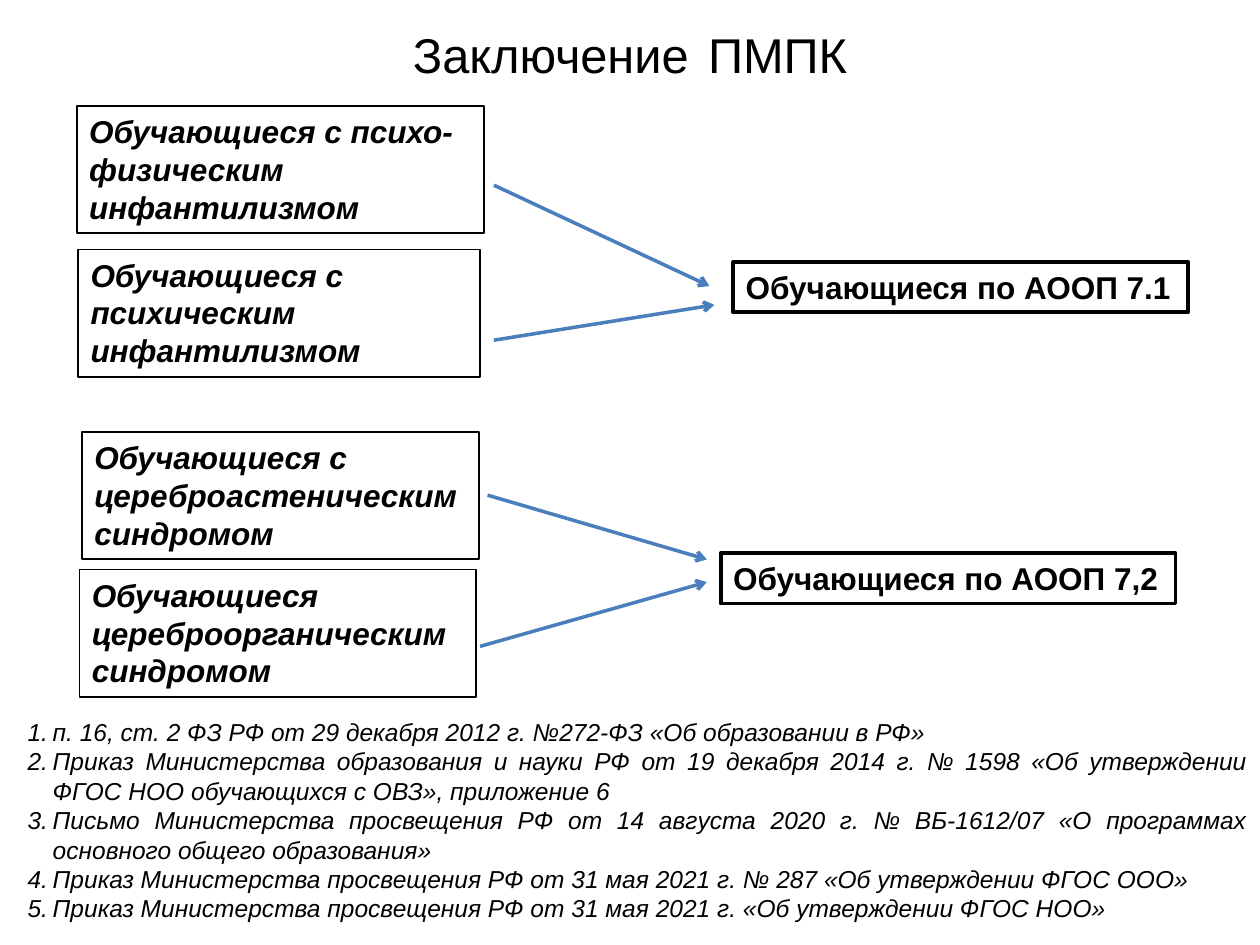
from pptx import Presentation
from pptx.dml.color import RGBColor
from pptx.enum.shapes import MSO_CONNECTOR, MSO_SHAPE
from pptx.enum.text import MSO_ANCHOR, PP_ALIGN
from pptx.oxml.ns import qn
from pptx.util import Inches, Pt
from lxml import etree

RECT = MSO_SHAPE.RECTANGLE
STRAIGHT = MSO_CONNECTOR.STRAIGHT
MIDDLE, TOP = MSO_ANCHOR.MIDDLE, MSO_ANCHOR.TOP
LEFT, CENTER, JUSTIFY = PP_ALIGN.LEFT, PP_ALIGN.CENTER, PP_ALIGN.JUSTIFY

FONT = "Arial"
BLACK, BLUE = "000000", "4B7EBC"

# Each box: left, top, width, height, text
GROUPS = [
    {
        "causes": [
            (0.61, 0.84, 3.23, 1.01, "Обучающиеся с психо-физическим инфантилизмом"),
            (0.62, 1.98, 3.19, 1.01, "Обучающиеся с психическим инфантилизмом"),
        ],
        "program": (5.82, 2.08, 3.61, 0.4, "Обучающиеся по АООП 7.1"),
        "arrows": [(3.92, 1.47, 5.63, 2.27), (3.92, 2.7, 5.67, 2.42)],
    },
    {
        "causes": [
            (0.65, 3.43, 3.15, 1.01, "Обучающиеся с цереброастеническим синдромом"),
            (0.63, 4.52, 3.15, 1.01, "Обучающиеся цереброорганическим синдромом"),
        ],
        "program": (5.72, 4.39, 3.61, 0.4, "Обучающиеся по АООП 7,2"),
        "arrows": [(3.87, 3.93, 5.61, 4.44), (3.81, 5.13, 5.61, 4.62)],
    },
]

SOURCES = [
    "п. 16, ст. 2 ФЗ РФ от 29 декабря 2012 г. №272-ФЗ «Об образовании в РФ»",
    "Приказ Министерства образования и науки РФ от 19 декабря 2014 г. № 1598 "
    "«Об утверждении ФГОС НОО обучающихся с ОВЗ», приложение 6",
    "Письмо Министерства просвещения РФ от 14 августа 2020 г. № ВБ-1612/07 "
    "«О программах основного общего образования»",
    "Приказ Министерства просвещения РФ от 31 мая 2021 г. № 287 «Об утверждении ФГОС ООО»",
    "Приказ Министерства просвещения РФ от 31 мая 2021 г. «Об утверждении ФГОС НОО»",
]


def color(hex_value):
    return RGBColor.from_string(hex_value)


def format_run(r, size, bold=False, italic=False):
    r.font.name = FONT
    r.font.size = Pt(size)
    r.font.bold = bold
    r.font.italic = italic
    r.font.color.rgb = color(BLACK)


def add_title(s, left, top, width, height):
    tb = s.shapes.add_textbox(Inches(left), Inches(top), Inches(width), Inches(height))
    tf = tb.text_frame
    tf.word_wrap = True
    tf.vertical_anchor = MIDDLE
    p = tf.paragraphs[0]
    p.alignment = CENTER
    for text, size in (("Заключение", 27.9), (" ", 39.6), ("ПМПК", 27.9)):
        r = p.add_run()
        r.text = text
        format_run(r, size)


def add_box(s, left, top, width, height, text, line_width, italic):
    sp = s.shapes.add_shape(RECT, Inches(left), Inches(top), Inches(width), Inches(height))
    sp.shadow.inherit = False
    sp.fill.background()
    sp.line.color.rgb = color(BLACK)
    sp.line.width = Pt(line_width)
    tf = sp.text_frame
    tf.word_wrap = True
    tf.vertical_anchor = TOP
    tf.text = text
    p = tf.paragraphs[0]
    p.alignment = LEFT
    format_run(p.runs[0], 18, bold=True, italic=italic)


def add_arrow(s, x1, y1, x2, y2):
    line = s.shapes.add_connector(STRAIGHT, Inches(x1), Inches(y1), Inches(x2), Inches(y2))
    line.line.color.rgb = color(BLUE)
    line.line.width = Pt(2)
    etree.SubElement(line.line._get_or_add_ln(), qn("a:tailEnd"), type="arrow")
    etree.SubElement(line._element.spPr, qn("a:effectLst"))


def add_group(s, causes, program, arrows):
    """Cause boxes with arrows leading to the programme they call for."""
    for cause in causes:
        add_box(s, *cause, line_width=1, italic=True)
    add_box(s, *program, line_width=2.25, italic=False)
    for arrow in arrows:
        add_arrow(s, *arrow)


def add_sources(s, left, top, width, height):
    tb = s.shapes.add_textbox(Inches(left), Inches(top), Inches(width), Inches(height))
    tf = tb.text_frame
    tf.word_wrap = True
    tf.text = "\n".join(SOURCES)
    for p in tf.paragraphs:
        p.alignment = JUSTIFY
        pPr = p._p.get_or_add_pPr()
        pPr.set("marL", str(Inches(0.2)))
        pPr.set("indent", str(-Inches(0.2)))
        etree.SubElement(pPr, qn("a:buFont"), typeface=FONT)
        etree.SubElement(pPr, qn("a:buAutoNum"), type="arabicPeriod")
        format_run(p.runs[0], 14, italic=True)


def main():
    prs = Presentation()
    prs.slide_width, prs.slide_height = Inches(10), Inches(7.5)
    s = prs.slides.add_slide(prs.slide_layouts[6])
    add_title(s, 0.5, 0.13, 9, 0.47)
    for group in GROUPS:
        add_group(s, **group)
    add_sources(s, 0.12, 5.64, 9.88, 1.99)
    prs.save("out.pptx")


if __name__ == "__main__":
    main()
